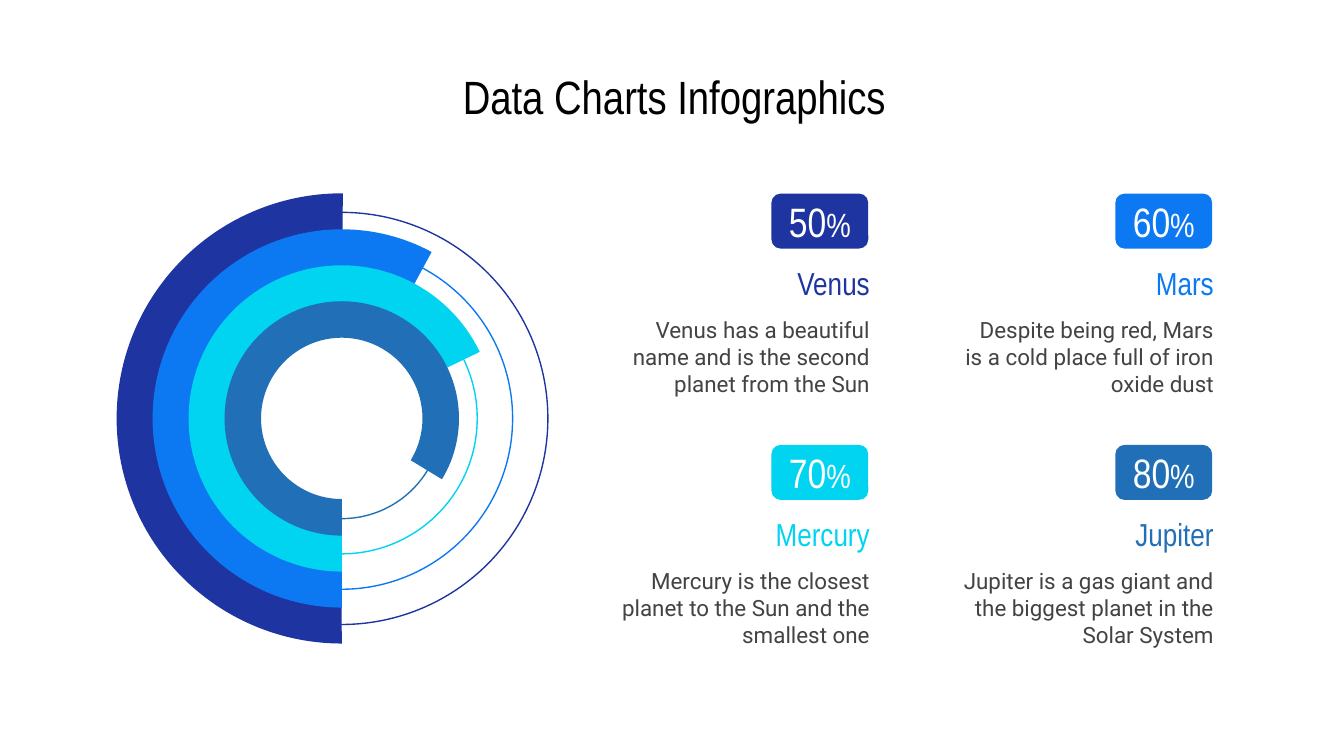
from pptx import Presentation
from pptx.dml.color import RGBColor
from pptx.enum.shapes import MSO_SHAPE
from pptx.enum.text import MSO_ANCHOR, MSO_AUTO_SIZE, PP_ALIGN
from pptx.util import Cm, Pt


def rgb(color):
    return RGBColor.from_string(color)


def write(shape, align, runs):
    """Fill a shape with one paragraph of (text, size, font, color) runs."""
    tf = shape.text_frame
    tf.word_wrap = True
    tf.auto_size = MSO_AUTO_SIZE.NONE
    tf.vertical_anchor = MSO_ANCHOR.MIDDLE
    tf.margin_left = tf.margin_right = tf.margin_top = tf.margin_bottom = Cm(0.25)
    p = tf.paragraphs[0]
    p.alignment = align
    for text, size, font, color in runs:
        r = p.add_run()
        r.text = text
        r.font.size = Pt(size)
        r.font.name = font
        r.font.color.rgb = rgb(color)


HEAD, BODY = "Arial Narrow", "Roboto"

# name, percent, color, end angle of the arc in degrees, description
planets = [
    ("Venus", "50", "1E35A1", 270.27,
     "Venus has a beautiful name and is the second planet from the Sun"),
    ("Mars", "60", "0C79F3", 298.36,
     "Despite being red, Mars is a cold place full of iron oxide dust"),
    ("Mercury", "70", "00D4F0", 334.25,
     "Mercury is the closest planet to the Sun and the smallest one"),
    ("Jupiter", "80", "2170B7", 31.27,
     "Jupiter is a gas giant and the biggest planet in the Solar System"),
]

prs = Presentation()
prs.slide_width, prs.slide_height = Cm(25.4), Cm(14.29)
s = prs.slides.add_slide(prs.slide_layouts[5])

title = s.shapes.title
title.left, title.top, title.width, title.height = Cm(1.35), Cm(1.14), Cm(22.78), Cm(1.35)
write(title, PP_ALIGN.CENTER, [("Data Charts Infographics", 25, HEAD, "000000")])

# Concentric rings, from the outside in
cx, cy, thickness = 6.46, 7.91, 0.69
for i, (name, percent, color, end, text) in enumerate(planets):
    d = 7.79 - 1.335 * i
    track = s.shapes.add_shape(MSO_SHAPE.OVAL, Cm(cx - d / 2), Cm(cy - d / 2), Cm(d), Cm(d))
    track.shadow.inherit = False
    track.fill.background()
    track.line.color.rgb = rgb(color)
    track.line.width = Pt(0.75)

    d = 8.51 - 1.36 * i
    arc = s.shapes.add_shape(MSO_SHAPE.BLOCK_ARC, Cm(cx - d / 2), Cm(cy - d / 2), Cm(d), Cm(d))
    arc.shadow.inherit = False
    # Angles are stored in 60000ths of a degree, adjustments in 100000ths
    arc.adjustments[0] = 90 * 0.6
    arc.adjustments[1] = end * 0.6
    arc.adjustments[2] = thickness / d
    arc.fill.solid()
    arc.fill.fore_color.rgb = rgb(color)
    arc.line.fill.background()

# Two by two grid of planet descriptions
for i, (name, percent, color, end, text) in enumerate(planets):
    row, col = divmod(i, 2)
    x, y = 11.46 + 6.5 * col, 3.66 + 4.75 * row

    tb = s.shapes.add_textbox(Cm(x), Cm(y + 2.11), Cm(5.23), Cm(1.93))
    write(tb, PP_ALIGN.RIGHT, [(text, 12, BODY, "434343")])

    tb = s.shapes.add_textbox(Cm(x), Cm(y + 1.3), Cm(5.23), Cm(0.76))
    write(tb, PP_ALIGN.RIGHT, [(name, 17, HEAD, color)])

    badge = s.shapes.add_shape(MSO_SHAPE.ROUNDED_RECTANGLE,
                               Cm(x + 3.12), Cm(y), Cm(1.83), Cm(1.04))
    badge.shadow.inherit = False
    badge.fill.solid()
    badge.fill.fore_color.rgb = rgb(color)
    badge.line.fill.background()
    write(badge, PP_ALIGN.CENTER,
          [(percent, 22, HEAD, "FFFFFF"), ("%", 18, HEAD, "FFFFFF")])

prs.save("out.pptx")
